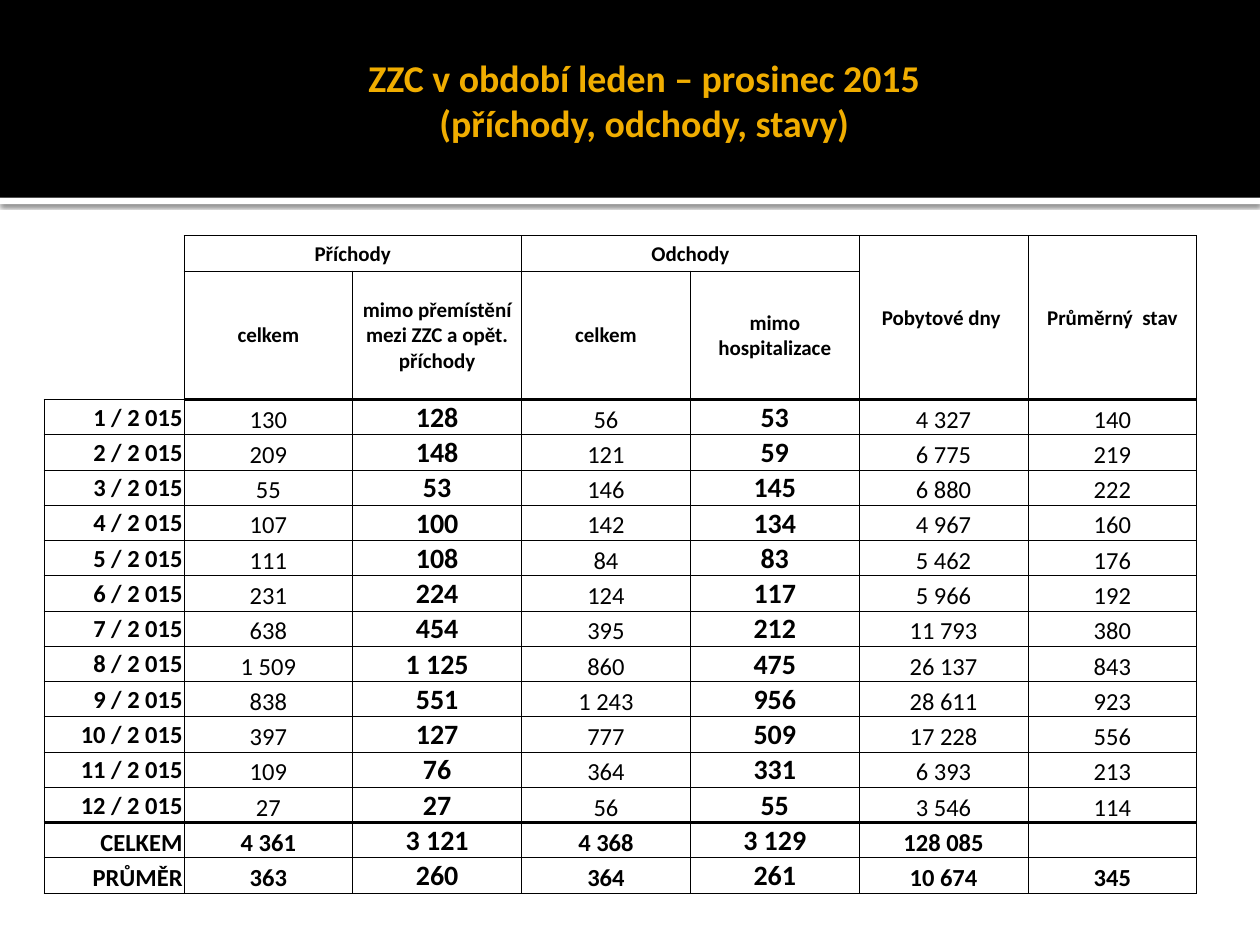
from lxml.etree import SubElement
from pptx import Presentation
from pptx.dml.color import RGBColor as RGB
from pptx.enum.shapes import MSO_SHAPE as Preset
from pptx.enum.text import MSO_ANCHOR as Anchor, PP_ALIGN as Align
from pptx.oxml import parse_xml
from pptx.oxml.ns import nsdecls, qn
from pptx.util import Inches, Pt

COLORS = {"band": "000000", "rule": "FFFFFF", "title": "F0AD00", "ink": "000000"}
FONT = "Calibri"
THIN, THICK = 0.5, 2
HEADER_ROWS, TOTAL_ROWS = 2, 2
BOLD_COLUMNS = (2, 4)

ROWS = [
    ["", "Příchody", "", "Odchody", "", "Pobytové dny ", "Průměrný  stav"],
    ["", "celkem", "mimo přemístění mezi ZZC a opět. příchody", "celkem", "mimo hospitalizace", "", ""],
    ["1 / 2 015", "130", "128", "56", "53", "4 327", "140"],
    ["2 / 2 015", "209", "148", "121", "59", "6 775", "219"],
    ["3 / 2 015", "55", "53", "146", "145", "6 880", "222"],
    ["4 / 2 015", "107", "100", "142", "134", "4 967", "160"],
    ["5 / 2 015", "111", "108", "84", "83", "5 462", "176"],
    ["6 / 2 015", "231", "224", "124", "117", "5 966", "192"],
    ["7 / 2 015", "638", "454", "395", "212", "11 793", "380"],
    ["8 / 2 015", "1 509", "1 125", "860", "475", "26 137", "843"],
    ["9 / 2 015", "838", "551", "1 243", "956", "28 611", "923"],
    ["10 / 2 015", "397", "127", "777", "509", "17 228", "556"],
    ["11 / 2 015", "109", "76", "364", "331", "6 393", "213"],
    ["12 / 2 015", "27", "27", "56", "55", "3 546", "114"],
    ["CELKEM", "4 361", "3 121", "4 368", "3 129", "128 085", ""],
    ["PRŮMĚR", "363", "260", "364", "261", "10 674", "345"],
]
FIRST_TOTAL = len(ROWS) - TOTAL_ROWS


def add_span(para, text, size, bold, color):
    span = para.add_run()
    span.text = text
    span.font.name = FONT
    span.font.size = Pt(size)
    span.font.bold = bold
    span.font.color.rgb = RGB.from_string(COLORS[color])


def set_borders(cell, widths):
    properties = cell._tc.get_or_add_tcPr()
    sides = [side for side in "LRTB" if side in widths]
    for position, side in enumerate(sides):
        properties.insert(position, parse_xml(
            f'<a:ln{side} {nsdecls("a")} w="{Pt(widths[side])}"><a:solidFill>'
            f'<a:srgbClr val="{COLORS["ink"]}"/></a:solidFill></a:ln{side}>'))


deck = Presentation()
deck.slide_width, deck.slide_height = Inches(10), Inches(7.5)
page = deck.slides.add_slide(deck.slide_layouts[6])

for name, top, height in (("rule", 1.57, 0.05), ("band", 0, 1.57)):
    bar = page.shapes.add_shape(Preset.RECTANGLE, 0, Inches(top), Inches(10), Inches(height))
    bar.shadow.inherit = False
    bar.fill.solid()
    bar.fill.fore_color.rgb = RGB.from_string(COLORS[name])
    bar.line.fill.background()
    if name == "rule":
        effects = bar.element.spPr.find(qn("a:effectLst"))
        effects.append(parse_xml(
            f'<a:outerShdw {nsdecls("a")} blurRad="{Pt(2.5)}" dist="{Pt(0.8)}" dir="5400000" '
            f'algn="tl" rotWithShape="0"><a:srgbClr val="{COLORS["ink"]}">'
            '<a:alpha val="60000"/></a:srgbClr></a:outerShdw>'))

box = page.shapes.add_textbox(Inches(0.59), Inches(0.36), Inches(9), Inches(0.87))
frame = box.text_frame
frame.word_wrap = True
frame.vertical_anchor = Anchor.MIDDLE
frame.margin_left = Inches(0.1)
frame.margin_right = frame.margin_top = frame.margin_bottom = Inches(0.05)
para = frame.paragraphs[0]
para.alignment = Align.CENTER
add_span(para, "ZZC v období leden – prosinec 2015", 21.6, True, "title")
para.add_line_break()
add_span(para, "(příchody, odchody, stavy)", 21.6, True, "title")

holder = page.shapes.add_table(len(ROWS), len(ROWS[0]), Inches(0.35), Inches(1.87), Inches(9.15), Inches(5.22))
table = holder.table
table.first_row = table.horz_banding = False
for style in holder.element.iter(qn("a:tableStyleId")):
    style.text = "{2D5ABB26-0587-4C30-8999-92F81FD0307C}"
for index, column in enumerate(table.columns):
    column.width = Inches(1.34 if index else 1.11)
for index, row in enumerate(table.rows):
    row.height = Inches(1.02 if index == 1 else 0.28)

for r, texts in enumerate(ROWS):
    header, total = r < HEADER_ROWS, r >= FIRST_TOTAL
    for c, text in enumerate(texts):
        cell = table.cell(r, c)
        cell.fill.background()
        cell.margin_left = cell.margin_right = cell.margin_top = Inches(0.01)
        cell.margin_bottom = 0
        month = c == 0 and not total
        cell.vertical_anchor = Anchor.MIDDLE if header or month else Anchor.BOTTOM
        para = cell.text_frame.paragraphs[0]
        para.alignment = Align.CENTER if c else Align.RIGHT
        size = 12 if header else 16 if c in BOLD_COLUMNS else 14
        if text:
            bold = header or total or c == 0 or c in BOLD_COLUMNS
            add_span(para, text, size, bold, "ink")
        else:
            SubElement(para._p, qn("a:endParaRPr"), sz=str(size * 100))

        widths = dict.fromkeys("LRTB", THIN)
        if header and c == 0:
            widths = {"R": THIN, "B": THIN} if r == 1 else {"R": THIN}
        if r == FIRST_TOTAL or (r == HEADER_ROWS and c):
            widths["T"] = THICK
        if r == FIRST_TOTAL - 1 or (r == 1 and c) or (r == 0 and c >= 5):
            widths["B"] = THICK
        set_borders(cell, widths)

for first, last in (((0, 1), (0, 2)), ((0, 3), (0, 4)), ((0, 5), (1, 5)), ((0, 6), (1, 6))):
    table.cell(*first).merge(table.cell(*last))

deck.save("out.pptx")
